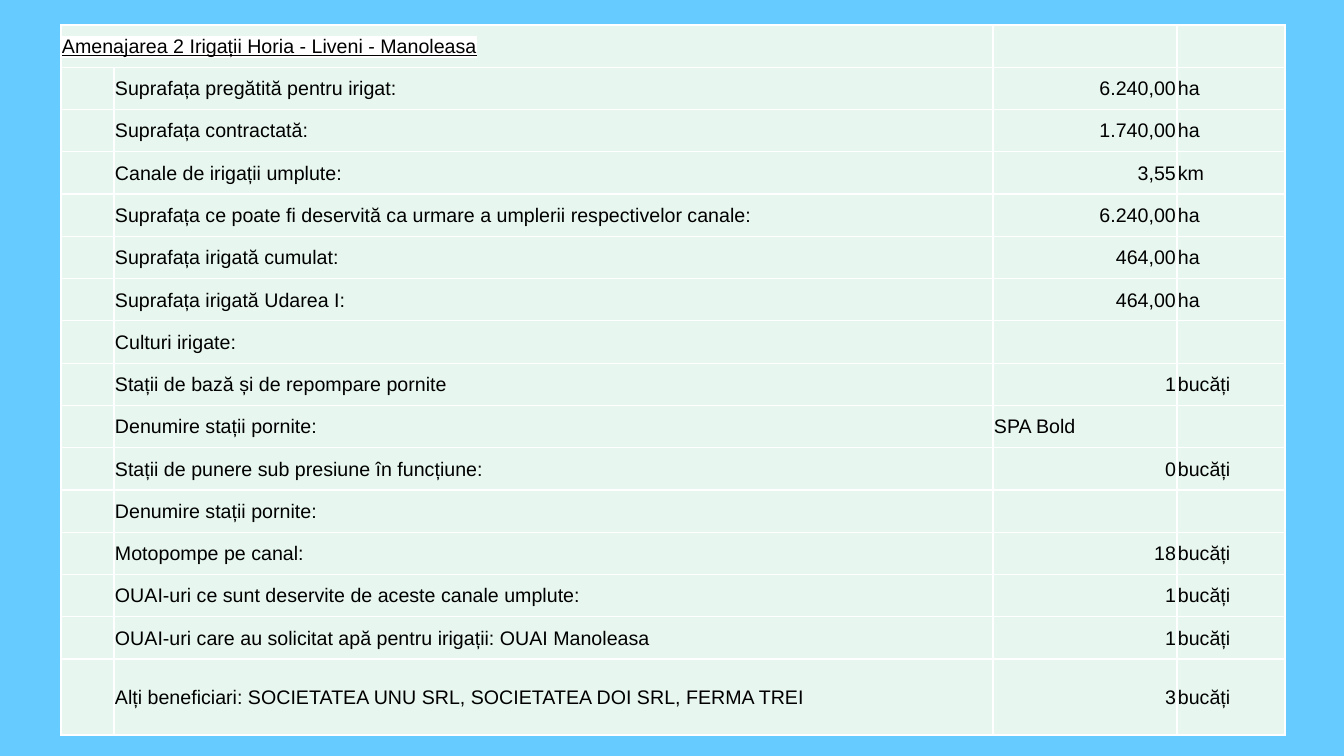
from dataclasses import dataclass

from lxml.etree import SubElement
from pptx import Presentation
from pptx.dml.color import RGBColor
from pptx.enum.text import MSO_ANCHOR, PP_ALIGN
from pptx.oxml import parse_xml
from pptx.oxml.ns import nsdecls, qn
from pptx.util import Pt

PX = 914400 / 100.8  # EMU in one px


@dataclass(frozen=True)
class Theme:
    background: str = "66CCFF"
    cell: str = "E7F6EF"
    border: str = "FFFFFF"
    highlight: str = "FFFFFF"
    text: str = "000000"
    font: str = "Arial"
    size: int = 14
    border_width: int = 1


THEME = Theme()
HEADING = "Amenajarea 2 Irigații Horia - Liveni - Manoleasa"
COLUMNS = (53, 879, 184, 108)
LAST_ROW = 76

# Label, value, unit
ROWS = [
    ("Suprafața pregătită pentru irigat:", "6.240,00", "ha"),
    ("Suprafața contractată:", "1.740,00", "ha"),
    ("Canale de irigații umplute:", "3,55", "km"),
    ("Suprafața ce poate fi deservită ca urmare a umplerii respectivelor canale:", "6.240,00", "ha"),
    ("Suprafața irigată cumulat:", "464,00", "ha"),
    ("Suprafața irigată Udarea I:", "464,00", "ha"),
    ("Culturi irigate:", "", ""),
    ("Stații de bază și de repompare pornite", "1", "bucăți"),
    ("Denumire stații pornite:", "SPA Bold", ""),
    ("Stații de punere sub presiune în funcțiune:", "0", "bucăți"),
    ("Denumire stații pornite:", "", ""),
    ("Motopompe pe canal:", "18", "bucăți"),
    ("OUAI-uri ce sunt deservite de aceste canale umplute:", "1", "bucăți"),
    ("OUAI-uri care au solicitat apă pentru irigații: OUAI Manoleasa", "1", "bucăți"),
    ("Alți beneficiari: SOCIETATEA UNU SRL, SOCIETATEA DOI SRL, FERMA TREI", "3", "bucăți"),
]


def px(n):
    return round(n * PX)


def rgb(value):
    return RGBColor.from_string(value)


def style_cell(cell):
    """Borders, fill, margins and anchor."""
    tc_pr = cell._tc.get_or_add_tcPr()
    for side in ("lnL", "lnR", "lnT", "lnB"):
        ln = SubElement(tc_pr, qn(f"a:{side}"), w=str(Pt(THEME.border_width)))
        fill = SubElement(ln, qn("a:solidFill"))
        SubElement(fill, qn("a:srgbClr"), val=THEME.border)
    cell.fill.solid()
    cell.fill.fore_color.rgb = rgb(THEME.cell)
    cell.margin_left = cell.margin_right = cell.margin_top = px(1)
    cell.margin_bottom = 0
    cell.vertical_anchor = MSO_ANCHOR.MIDDLE


def write_cell(cell, text, align=PP_ALIGN.LEFT):
    p = cell.text_frame.paragraphs[0]
    p.text = text
    p.alignment = align
    for r in p.runs:
        r.font.size = Pt(THEME.size)
        r.font.name = THEME.font
        r.font.color.rgb = rgb(THEME.text)


def mark_heading(r):
    """Underline the run and highlight it."""
    r.font.underline = True
    highlight = parse_xml(
        f'<a:highlight {nsdecls("a")}><a:srgbClr val="{THEME.highlight}"/></a:highlight>'
    )
    r.font._element.find(qn("a:latin")).addprevious(highlight)


def add_irrigation_table(slide, left, top, width, height):
    shape = slide.shapes.add_table(
        len(ROWS) + 1, len(COLUMNS), px(left), px(top), px(width), px(height)
    )
    table = shape.table

    # Grid: equal rows above a taller last one
    for column, share in zip(table.columns, COLUMNS):
        column.width = px(width * share / sum(COLUMNS))
    for row in table.rows:
        row.height = px((height - LAST_ROW) / len(ROWS))
    table.rows[len(ROWS)].height = px(LAST_ROW)
    for cell in table.iter_cells():
        style_cell(cell)

    # Heading across the first two columns
    heading = table.cell(0, 0)
    heading.merge(table.cell(0, 1))
    write_cell(heading, HEADING)
    mark_heading(heading.text_frame.paragraphs[0].runs[0])

    # Figures go right, names go left
    for i, (label, value, unit) in enumerate(ROWS, start=1):
        write_cell(table.cell(i, 1), label)
        write_cell(table.cell(i, 2), value, PP_ALIGN.RIGHT if unit else PP_ALIGN.LEFT)
        write_cell(table.cell(i, 3), unit)


def main():
    prs = Presentation()
    prs.slide_width, prs.slide_height = px(1344), px(756)
    slide = prs.slides.add_slide(prs.slide_layouts[6])
    slide.background.fill.solid()
    slide.background.fill.fore_color.rgb = rgb(THEME.background)
    add_irrigation_table(slide, left=61, top=25, width=1224, height=710)
    prs.save("out.pptx")


if __name__ == "__main__":
    main()
